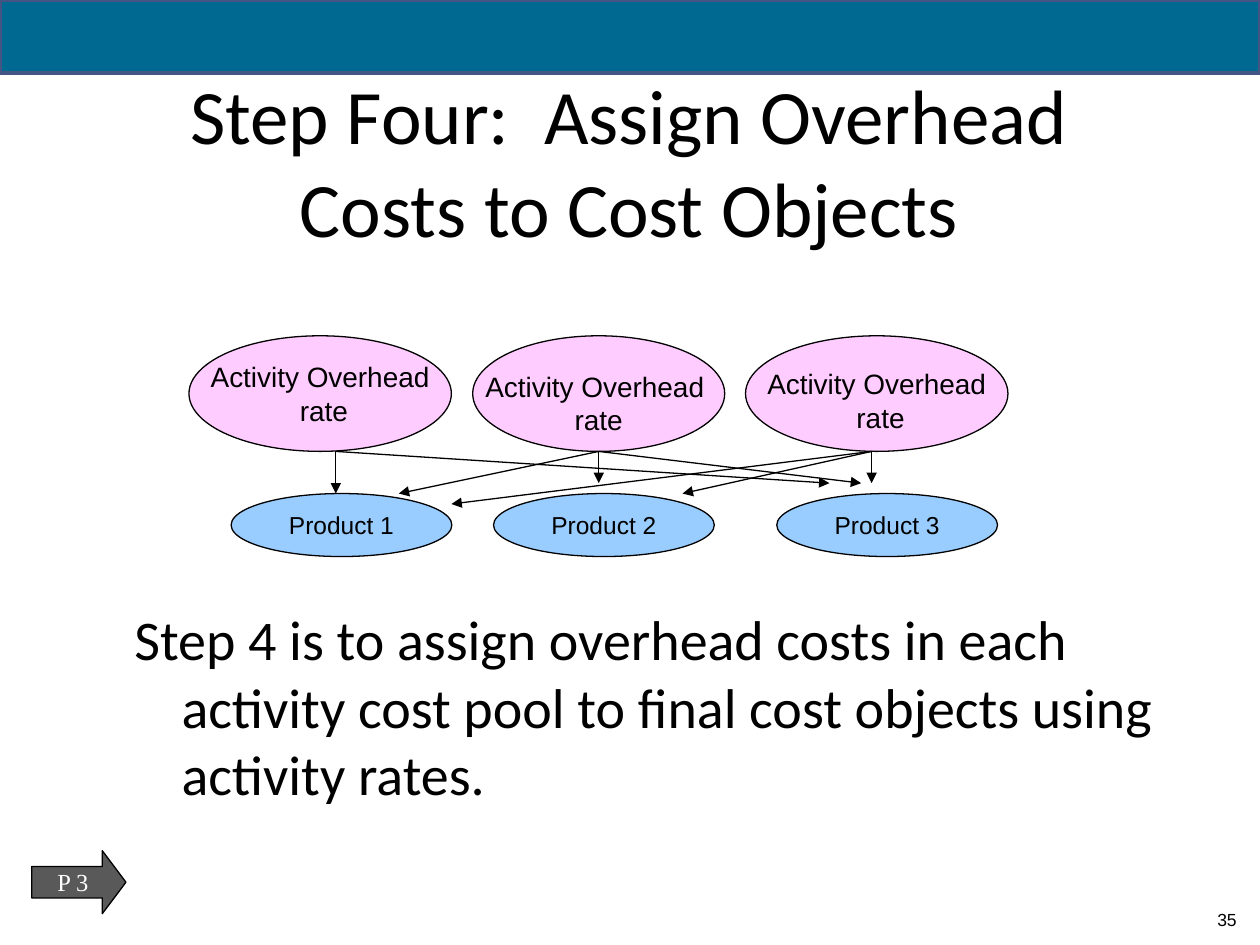
from dataclasses import dataclass

import pptx
import pptx.dml.color
import pptx.enum.dml
import pptx.enum.shapes
import pptx.enum.text
import pptx.oxml.ns
import pptx.util
from lxml import etree
from pptx.shapes.autoshape import Shape
from pptx.slide import Slide

Cm = pptx.util.Cm
Pt = pptx.util.Pt
RGBColor = pptx.dml.color.RGBColor
MSO_SHAPE = pptx.enum.shapes.MSO_SHAPE
PP_ALIGN = pptx.enum.text.PP_ALIGN
MSO_ANCHOR = pptx.enum.text.MSO_ANCHOR
qn = pptx.oxml.ns.qn

BLACK = RGBColor(0x00, 0x00, 0x00)
WHITE = RGBColor(0xFF, 0xFF, 0xFF)
TEAL = RGBColor(0x00, 0x69, 0x91)
INDIGO = RGBColor(0x44, 0x55, 0x83)
PINK = RGBColor(0xFF, 0xCC, 0xFF)
SKY = RGBColor(0x99, 0xCC, 0xFF)
GREY = RGBColor(0x59, 0x59, 0x59)

RATE_TOP, RATE_HEIGHT = 6.77, 2.33
RATE_BOTTOM = RATE_TOP + RATE_HEIGHT
PRODUCT_TOP, PRODUCT_WIDTH, PRODUCT_HEIGHT = 9.95, 4.45, 1.27
ABOVE_PRODUCT = 9.74


@dataclass(frozen=True)
class Box:
    left: float
    top: float
    width: float
    height: float

    def lengths(self) -> tuple:
        return tuple(map(Cm, (self.left, self.top, self.width, self.height)))


@dataclass(frozen=True)
class Style:
    font: str
    size: float
    color: RGBColor = BLACK
    align: PP_ALIGN = PP_ALIGN.CENTER
    anchor: MSO_ANCHOR = MSO_ANCHOR.MIDDLE
    wrap: bool = True


@dataclass(frozen=True)
class Rate:
    left: float
    width: float
    lines: tuple[str, ...]
    insets: tuple[float, float]
    source: float
    targets: tuple[tuple[float, float], ...]


TITLE = Style("Calibri", 44)
BODY = Style("Calibri", 32, align=PP_ALIGN.LEFT, anchor=MSO_ANCHOR.TOP)
RATE = Style("Arial", 16, wrap=False)
PRODUCT = Style("Arial", 14, wrap=False)
PAGE = Style("Arial", 10, align=PP_ALIGN.RIGHT, anchor=MSO_ANCHOR.TOP)
POINTER = Style("Times New Roman", 14, WHITE, wrap=False)

RATES = (
    Rate(3.81, 5.29, ("Activity Overhead", " rate"), (0.13, 0.13), 6.77,
         ((6.77, PRODUCT_TOP), (16.72, ABOVE_PRODUCT))),
    Rate(9.53, 5.08, ("Activity Overhead ", "rate"), (0.38, 0), 12.07,
         ((12.07, ABOVE_PRODUCT), (8.04, PRODUCT_TOP), (17.36, ABOVE_PRODUCT))),
    Rate(15.03, 5.29, ("Activity Overhead", " rate"), (0.28, 0), 17.57,
         ((17.57, ABOVE_PRODUCT), (13.76, PRODUCT_TOP), (9.1, 10.16))),
)
PRODUCT_LEFTS = (4.66, 9.95, 15.66)


def set_all(target: object, values: dict) -> None:
    for name, value in values.items():
        setattr(target, name, value)


def write(shape: Shape, lines: tuple[str, ...], style: Style) -> None:
    frame = shape.text_frame
    set_all(frame, {"word_wrap": style.wrap, "vertical_anchor": style.anchor})
    for index, line in enumerate(lines):
        paragraph = frame.add_paragraph() if index else frame.paragraphs[0]
        paragraph.alignment = style.align
        run = paragraph.add_run()
        run.text = line
        set_all(run.font, {"name": style.font, "size": Pt(style.size)})
        run.font.color.rgb = style.color


def add_text(slide: Slide, box: Box, text: str, style: Style) -> Shape:
    label = slide.shapes.add_textbox(*box.lengths())
    write(label, (text,), style)
    return label


def add_figure(slide: Slide, kind: MSO_SHAPE, box: Box, fill: RGBColor,
               line: RGBColor = BLACK, weight: float = 0.75) -> Shape:
    figure = slide.shapes.add_shape(kind, *box.lengths())
    figure.shadow.inherit = False
    figure.fill.solid()
    figure.fill.fore_color.rgb = fill
    figure.line.color.rgb = line
    figure.line.width = Pt(weight)
    return figure


def add_arrow(slide: Slide, start: tuple[float, float], end: tuple[float, float]) -> None:
    arrow = slide.shapes.add_connector(
        pptx.enum.shapes.MSO_CONNECTOR.STRAIGHT, *map(Cm, start + end))
    arrow.line.color.rgb = BLACK
    arrow.line.width = Pt(0.75)
    properties = arrow.element.spPr
    etree.SubElement(properties.find(qn("a:ln")), qn("a:tailEnd"), type="triangle")
    etree.SubElement(properties, qn("a:effectLst"))


def add_cost_flow(slide: Slide) -> None:
    for rate in RATES:
        pool = add_figure(slide, MSO_SHAPE.OVAL,
                          Box(rate.left, RATE_TOP, rate.width, RATE_HEIGHT), PINK)
        write(pool, rate.lines, RATE)
        above, below = map(Cm, rate.insets)
        set_all(pool.text_frame, {"margin_top": above, "margin_bottom": below})
    for number, left in enumerate(PRODUCT_LEFTS, 1):
        product = add_figure(slide, MSO_SHAPE.OVAL,
                             Box(left, PRODUCT_TOP, PRODUCT_WIDTH, PRODUCT_HEIGHT), SKY)
        write(product, (f"Product {number}",), PRODUCT)
    for rate in RATES:
        for target in rate.targets:
            add_arrow(slide, (rate.source, RATE_BOTTOM), target)


def main() -> None:
    deck = pptx.Presentation()
    set_all(deck, {"slide_width": Cm(25.4), "slide_height": Cm(19.05)})
    slide = deck.slides.add_slide(deck.slide_layouts[6])

    add_figure(slide, MSO_SHAPE.RECTANGLE, Box(0, 0, 25.4, 1.48), TEAL, INDIGO, 2.25)
    add_text(slide, Box(2.74, 1.45, 19.89, 3.56),
             "Step Four:  Assign Overhead Costs to Cost Objects", TITLE)
    explanation = add_text(
        slide, Box(2.46, 12.07, 21.29, 4.65),
        "Step 4 is to assign overhead costs in each activity cost pool "
        "to final cost objects using activity rates.", BODY)
    hanging = explanation.text_frame.paragraphs[0]._p.get_or_add_pPr()
    for name, length in {"marL": Cm(0.95), "indent": -Cm(0.95)}.items():
        hanging.set(name, str(length))

    add_cost_flow(slide)
    add_text(slide, Box(23.7, 18.21, 1.48, 0.64), "35", PAGE)
    pointer = add_figure(slide, MSO_SHAPE.RIGHT_ARROW, Box(0.64, 17.15, 1.9, 1.27), GREY)
    pointer.adjustments[1] = 0.375
    write(pointer, ("P 3",), POINTER)

    deck.save("out.pptx")


if __name__ == "__main__":
    main()
